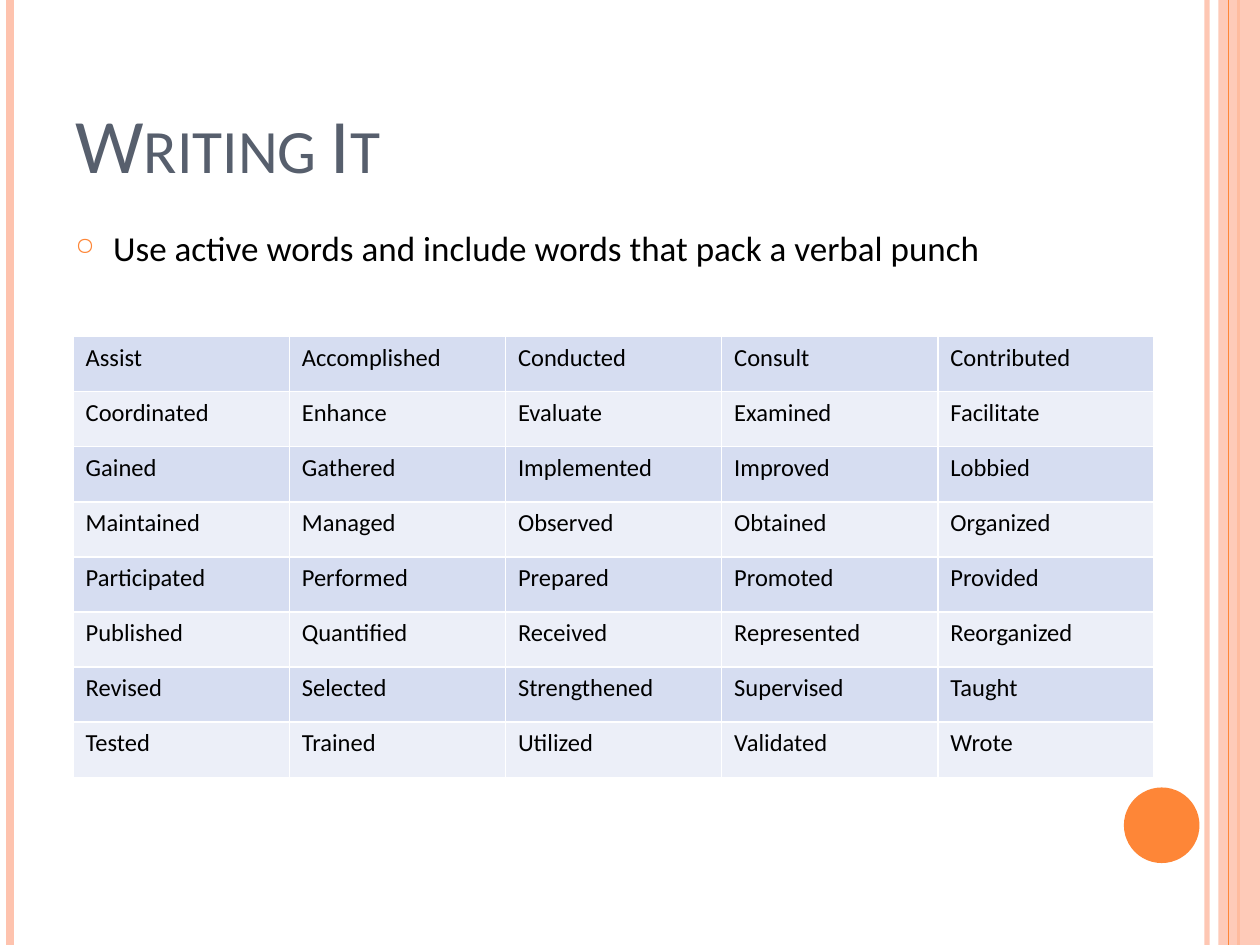
from dataclasses import dataclass

from lxml import etree
from pptx import Presentation
from pptx import util as u
from pptx.dml.color import RGBColor
from pptx.enum import shapes, text
from pptx.oxml import ns


@dataclass(frozen=True)
class Theme:
    """Colours, font and type sizes of the slide."""
    font: str = "Calibri"
    orange: str = "FE8637"
    peach: str = "FEC3AE"
    slate: str = "575F6D"
    ink: str = "000000"
    white: str = "FFFFFF"
    bands: tuple = ("D6DDF1", "ECEFF8")
    title_size: int = 44
    body_size: int = 20
    cell_size: int = 14


THEME = Theme()
VERBS = """
Assist Accomplished Conducted Consult Contributed
Coordinated Enhance Evaluate Examined Facilitate
Gained Gathered Implemented Improved Lobbied
Maintained Managed Observed Obtained Organized
Participated Performed Prepared Promoted Provided
Published Quantified Received Represented Reorganized
Revised Selected Strengthened Supervised Taught
Tested Trained Utilized Validated Wrote
"""


def add_child(parent, tag, **attributes):
    """Append a DrawingML element and return it."""
    child = etree.SubElement(parent, ns.qn(f"a:{tag}"))
    for name, value in attributes.items():
        child.set(name, str(value))
    return child


def paint(fill, color, opacity=100):
    """Give a fill one solid colour, translucent if asked."""
    fill.solid()
    fill.fore_color.rgb = RGBColor.from_string(color)
    if opacity < 100:
        solid = fill._xPr.find(ns.qn("a:solidFill"))
        add_child(solid[0], "alpha", val=opacity * 1000)


def write(frame, wording, size, color=THEME.ink, anchor=text.MSO_ANCHOR.TOP,
          small_caps=False, bullet=None, space_before=0):
    """Write one formatted paragraph into a text frame."""
    frame.word_wrap = True
    frame.vertical_anchor = anchor
    paragraph = frame.paragraphs[0]
    paragraph.space_before = u.Pt(space_before)
    run = paragraph.add_run()
    run.text = wording
    run.font.name = THEME.font
    run.font.size = u.Pt(size)
    run.font.color.rgb = RGBColor.from_string(color)
    if small_caps:
        run.font._element.set("cap", "small")
    if bullet:
        properties = paragraph._p.get_or_add_pPr()
        properties.set("marL", str(u.Inches(0.3)))
        properties.set("indent", str(u.Inches(-0.3)))
        add_child(add_child(properties, "buClr"), "srgbClr", val=THEME.orange)
        add_child(properties, "buSzPct", val=70000)
        add_child(properties, "buChar", char=bullet)


def add_stripe(slide, x, color, width, opacity=100):
    """Draw a vertical line over the full slide height."""
    stripe = slide.shapes.add_connector(
        shapes.MSO_CONNECTOR.STRAIGHT,
        u.Inches(x), 0, u.Inches(x), u.Inches(7.5))
    stripe.line.width = u.Pt(width)
    paint(stripe.line.fill, color, opacity)
    add_child(stripe._element.spPr, "effectLst")


def add_solid(slide, preset, box, color, opacity=100):
    """Draw a plain preset shape without outline."""
    solid = slide.shapes.add_shape(preset, *map(u.Inches, box))
    solid.shadow.inherit = False
    solid.line.fill.background()
    paint(solid.fill, color, opacity)


def add_side_bands(slide):
    """Draw the stripes along both edges and the round accent."""
    add_stripe(slide, 9.58, THEME.peach, 3, opacity=93)
    add_stripe(slide, 0.08, THEME.peach, 4.5)
    add_stripe(slide, 9.83, THEME.orange, 1.5)
    add_solid(slide, shapes.MSO_SHAPE.RECTANGLE, (9.67, 0, 0.33, 7.5),
              THEME.peach, opacity=87)
    add_stripe(slide, 9.75, THEME.orange, 0.75)
    add_solid(slide, shapes.MSO_SHAPE.OVAL, (8.92, 6.25, 0.6, 0.6), THEME.orange)


def add_text(slide, box, wording, **text_format):
    """Place a text box and write its paragraph."""
    holder = slide.shapes.add_textbox(*map(u.Inches, box))
    write(holder.text_frame, wording, **text_format)


def border_cell(cell, color, width):
    """Draw the same border on all four sides of a cell."""
    properties = cell._tc.get_or_add_tcPr()
    for side in ("lnL", "lnR", "lnT", "lnB"):
        border = add_child(properties, side, w=u.Pt(width))
        add_child(add_child(border, "solidFill"), "srgbClr", val=color)


def add_verb_table(slide, box, rows):
    """Fill a banded table with one verb in each cell."""
    table = slide.shapes.add_table(
        len(rows), len(rows[0]), *map(u.Inches, box)).table
    table.first_row = False
    for row_index, verbs in enumerate(rows):
        for column_index, verb in enumerate(verbs):
            cell = table.cell(row_index, column_index)
            border_cell(cell, THEME.white, 1)
            paint(cell.fill, THEME.bands[row_index % 2])
            write(cell.text_frame, verb, size=THEME.cell_size)


def main():
    """Build the slide and save it."""
    deck = Presentation()
    deck.slide_width, deck.slide_height = u.Inches(10), u.Inches(7.5)
    slide = deck.slides.add_slide(deck.slide_layouts[6])
    add_side_bands(slide)
    add_text(slide, (0.5, 0.3, 8.17, 1.25), "Writing It",
             size=THEME.title_size, color=THEME.slate,
             anchor=text.MSO_ANCHOR.BOTTOM, small_caps=True)
    add_text(slide, (0.5, 1.75, 8.17, 5.33),
             "Use active words and include words that pack a verbal punch",
             size=THEME.body_size, bullet="○", space_before=6)
    verb_rows = [line.split() for line in VERBS.strip().splitlines()]
    add_verb_table(slide, (0.58, 2.67, 8.58, 3.5), verb_rows)
    deck.save("out.pptx")


if __name__ == "__main__":
    main()
